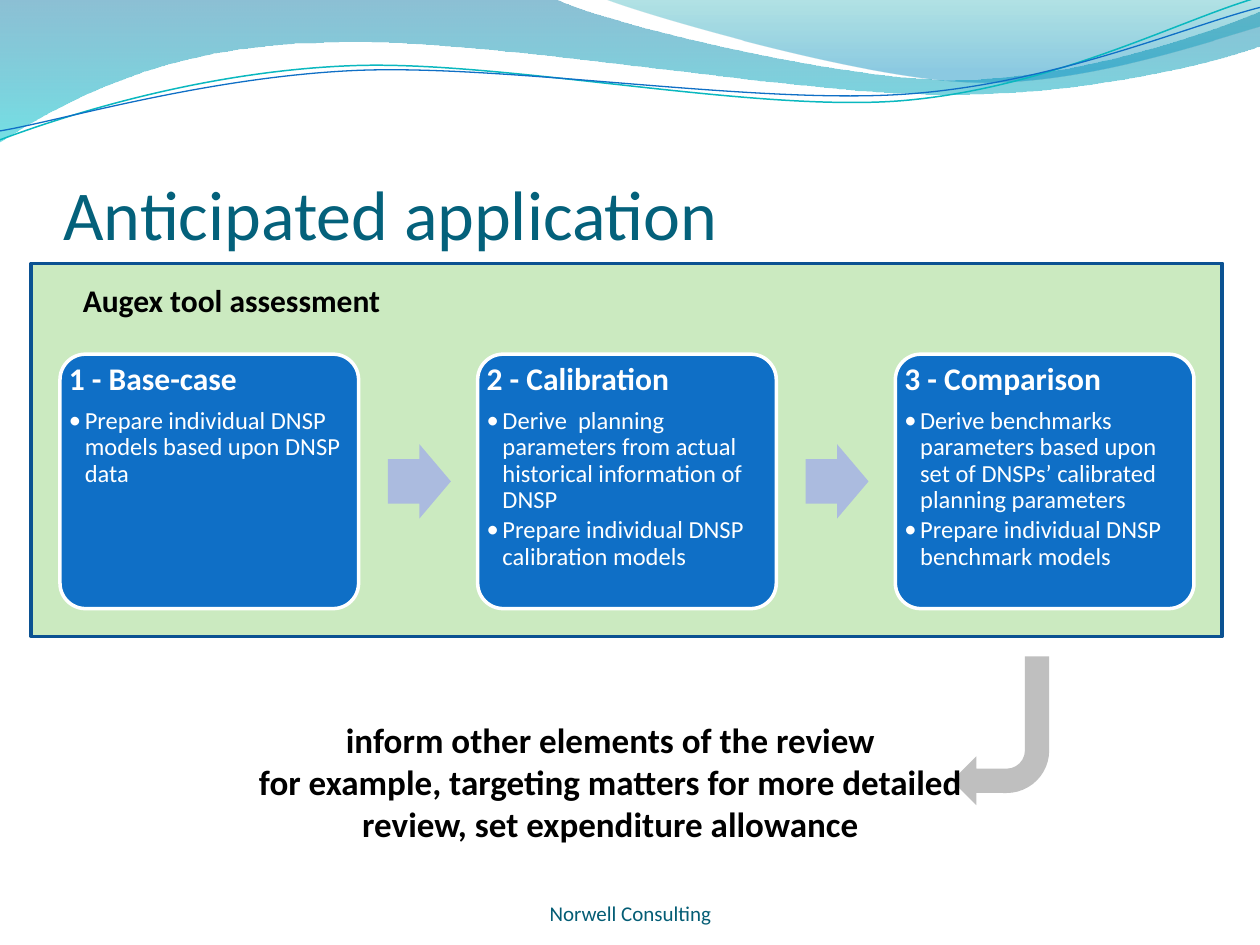
from lxml import etree
from pptx import Presentation
from pptx.dml.color import RGBColor
from pptx.enum.shapes import MSO_SHAPE
from pptx.enum.text import MSO_ANCHOR, MSO_AUTO_SIZE, PP_ALIGN
from pptx.oxml.ns import qn
from pptx.util import Cm, Pt

TOP, BOTTOM = MSO_ANCHOR.TOP, MSO_ANCHOR.BOTTOM
LEFT, CENTER = PP_ALIGN.LEFT, PP_ALIGN.CENTER
RECTANGLE, ROUNDED = MSO_SHAPE.RECTANGLE, MSO_SHAPE.ROUNDED_RECTANGLE
RIGHT_ARROW, BENT_ARROW = MSO_SHAPE.RIGHT_ARROW, MSO_SHAPE.BENT_ARROW

FONT = "Calibri"
BLACK = RGBColor(0x00, 0x00, 0x00)
WHITE = RGBColor(0xFF, 0xFF, 0xFF)
TITLE_TEAL = RGBColor(0x04, 0x61, 0x7B)
FOOTER_TEAL = RGBColor(0x04, 0x5D, 0x75)
BLUE = RGBColor(0x0F, 0x6F, 0xC6)
NAVY = RGBColor(0x0B, 0x52, 0x92)
PALE_GREEN = RGBColor(0xCB, 0xEA, 0xC0)
LAVENDER = RGBColor(0xAB, 0xBB, 0xDF)
GREY = RGBColor(0xBF, 0xBF, 0xBF)
TURQUOISE = RGBColor(0x0A, 0xB8, 0xBF)

TITLE = "Anticipated application"
PANEL_HEADING = "Augex tool assessment"
OUTCOME = [
    "inform other elements of the review",
    "for example, targeting matters for more detailed review, set expenditure allowance",
]
FOOTER = "Norwell Consulting"
STEPS = [
    ("1 - Base-case", ["Prepare individual DNSP models based upon DNSP data"]),
    ("2 - Calibration", [
        "Derive  planning parameters from actual historical information of DNSP",
        "Prepare individual DNSP calibration models",
    ]),
    ("3 - Comparison", [
        "Derive benchmarks parameters based upon set of DNSPs’ calibrated planning parameters",
        "Prepare individual DNSP benchmark models",
    ]),
]

# Outlines in cm: a start point, then segments of one point (straight)
# or three points (two Bézier controls and the end).
# Gradient stops: position, colour, opacity in percent.
BANDS = [
    ((0, -0.03), [
        [(11.18, -0.03)],
        [(12.09, 0.43), (16.87, 1.6), (19.25, 1.6)],
        [(21.67, 1.6), (24.33, 0.66), (25.4, 0.23)],
        [(25.43, 0.91)],
        [(24.97, 1.12), (22.1, 1.93), (18.95, 1.9)],
        [(15.8, 1.9), (9.7, 0.71), (6.53, 0.86)],
        [(3.28, 0.89), (1.17, 2.11), (-0.03, 2.87)],
    ], [(0, RGBColor(0x00, 0x74, 0xA1), 45), (1, RGBColor(0x00, 0xC6, 0xCF), 55)]),
    ((12.17, -0.03), [
        [(12.93, 0.28), (17.32, 1.57), (19.53, 1.65)],
        [(21.74, 1.75), (24.41, 0.81), (25.4, 0.53)],
        [(25.4, 0)],
    ], [(0, RGBColor(0x00, 0xA1, 0xA9), 30), (0.8, RGBColor(0x00, 0x8B, 0xBF), 45)]),
]
# Drawn level, then tilted by WAVE_TILT degrees.
WAVE_TILT = -2.7
WAVE_LINES = [
    ((-0.05, 2.22), [
        [(1.19, 1.82), (4.02, 1.04), (7.05, 1.06)],
        [(10.05, 1.07), (15.02, 2.37), (18.08, 2.29)],
        [(21.13, 2.2), (23.86, 0.91), (25.41, 0.55)],
    ], TURQUOISE, 0.85),
    ((-0.04, 2.04), [
        [(1.16, 1.9), (4.17, 1.15), (7.2, 1.16)],
        [(10.25, 1.18), (15.13, 2.22), (18.19, 2.16)],
        [(21.22, 2.1), (23.93, 1.06), (25.45, 0.75)],
    ], BLUE, 0.75),
]

CARD_LEFT, CARD_TOP, CARD_W, CARD_H = 1.21, 7.14, 6.02, 5.13
CARD_PITCH = 8.42
ARROW_OFFSET, ARROW_W, ARROW_H = 6.61, 1.27, 1.5


def add_outline(slide, start, segments, close):
    """Draw the outline through all points, then turn point triples into curves."""
    points = [(Cm(x), Cm(y)) for segment in segments for x, y in segment]
    builder = slide.shapes.build_freeform(Cm(start[0]), Cm(start[1]))
    builder.add_line_segments(points, close=close)
    outline = builder.convert_to_shape()
    outline.shadow.inherit = False
    straights = iter(list(outline._element.iter(qn("a:lnTo"))))
    for segment in segments:
        parts = [next(straights) for _ in segment]
        if len(parts) == 3:
            curve = etree.Element(qn("a:cubicBezTo"))
            parts[0].addprevious(curve)
            for part in parts:
                curve.append(part[0])
                part.getparent().remove(part)
    return outline


def add_waves(slide):
    for start, segments, stops in BANDS:
        band = add_outline(slide, start, segments, True)
        band.line.fill.background()
        band.fill.gradient()
        band.fill.gradient_angle = 270
        for stop, (position, color, _) in zip(band.fill.gradient_stops, stops):
            stop.position = position
            stop.color.rgb = color
        color_tags = band._element.spPr.iter(qn("a:srgbClr"))
        for tag, (_, _, opacity) in zip(color_tags, stops):
            etree.SubElement(tag, qn("a:alpha"), val=str(opacity * 1000))
    for start, segments, color, width in WAVE_LINES:
        wave = add_outline(slide, start, segments, False)
        wave.rotation = WAVE_TILT
        wave.fill.background()
        wave.line.color.rgb = color
        wave.line.width = Pt(width)


def add_block(slide, preset, box, fill, line=None):
    block = slide.shapes.add_shape(preset, *map(Cm, box))
    block.shadow.inherit = False
    block.fill.solid()
    block.fill.fore_color.rgb = fill
    if line:
        block.line.color.rgb = line
        block.line.width = Pt(2)
    else:
        block.line.fill.background()
    return block


def set_frame(frame, anchor, insets):
    frame.word_wrap = True
    frame.vertical_anchor = anchor
    (frame.margin_left, frame.margin_top,
     frame.margin_right, frame.margin_bottom) = map(Cm, insets)


def write(frame, lines, size, color, bold=False, align=LEFT):
    """Fill the frame's first paragraph, then append one per further line."""
    for line in lines:
        paragraph = frame.add_paragraph() if frame.text else frame.paragraphs[0]
        paragraph.text = line
        paragraph.alignment = align
        font = paragraph.font
        font.name, font.size, font.bold = FONT, Pt(size), bold
        font.color.rgb = color


def add_label(slide, box, lines, size, color, bold=False, align=LEFT,
              anchor=TOP, insets=(0.25, 0.13, 0.25, 0.13), grow=False):
    frame = slide.shapes.add_textbox(*map(Cm, box)).text_frame
    set_frame(frame, anchor, insets)
    if grow:
        frame.auto_size = MSO_AUTO_SIZE.SHAPE_TO_FIT_TEXT
    write(frame, lines, size, color, bold, align)


def add_bullet(paragraph):
    paragraph.level = 1
    properties = paragraph._p.get_or_add_pPr()
    properties.set("marL", str(Cm(0.32)))
    properties.set("indent", str(-Cm(0.32)))
    defaults = properties.find(qn("a:defRPr"))
    for tag, attributes in (("a:buFont", {"typeface": FONT}), ("a:buChar", {"char": "•"})):
        defaults.addprevious(etree.Element(qn(tag), attributes))


def add_card(slide, left, heading, bullets):
    card = add_block(slide, ROUNDED, (left, CARD_TOP, CARD_W, CARD_H), BLUE, WHITE)
    card.adjustments[0] = 0.1
    frame = card.text_frame
    set_frame(frame, TOP, (0.03,) * 4)
    write(frame, [heading], 18, WHITE, bold=True)
    write(frame, bullets, 14, WHITE)
    title, *items = frame.paragraphs
    title.line_spacing, title.space_after = 0.9, Pt(6.3)
    for item in items:
        item.line_spacing, item.space_after = 0.9, Pt(2.1)
        add_bullet(item)


def main():
    deck = Presentation()
    deck.slide_width, deck.slide_height = Cm(25.4), Cm(19.05)
    slide = deck.slides.add_slide(deck.slide_layouts[6])

    add_waves(slide)
    add_block(slide, RECTANGLE, (0.63, 5.31, 24.01, 7.52), PALE_GREEN, NAVY)
    add_label(slide, (1.28, 1.96, 22.86, 3.17), [TITLE], 40, TITLE_TEAL,
              anchor=BOTTOM, insets=(0, 0.13, 0, 0))
    add_label(slide, (8.05, 17.65, 9.32, 1.02), [FOOTER], 12, FOOTER_TEAL,
              align=CENTER, anchor=BOTTOM, insets=(0, 0, 0, 0))

    arrow_top = CARD_TOP + (CARD_H - ARROW_H) / 2
    for index, (heading, bullets) in enumerate(STEPS):
        left = CARD_LEFT + index * CARD_PITCH
        add_card(slide, left, heading, bullets)
        if index < len(STEPS) - 1:
            arrow = add_block(slide, RIGHT_ARROW,
                              (left + ARROW_OFFSET, arrow_top, ARROW_W, ARROW_H), LAVENDER)
            arrow.adjustments[0] = 0.6

    add_block(slide, BENT_ARROW, (19.19, 13.23, 1.96, 3), GREY).rotation = 180
    add_label(slide, (1.42, 5.54, 7.65, 1.02), [PANEL_HEADING], 18, BLACK, bold=True, grow=True)
    add_label(slide, (4.95, 14.35, 14.71, 2.82), OUTCOME, 20, BLACK,
              bold=True, align=CENTER, grow=True)
    deck.save("out.pptx")


if __name__ == "__main__":
    main()
